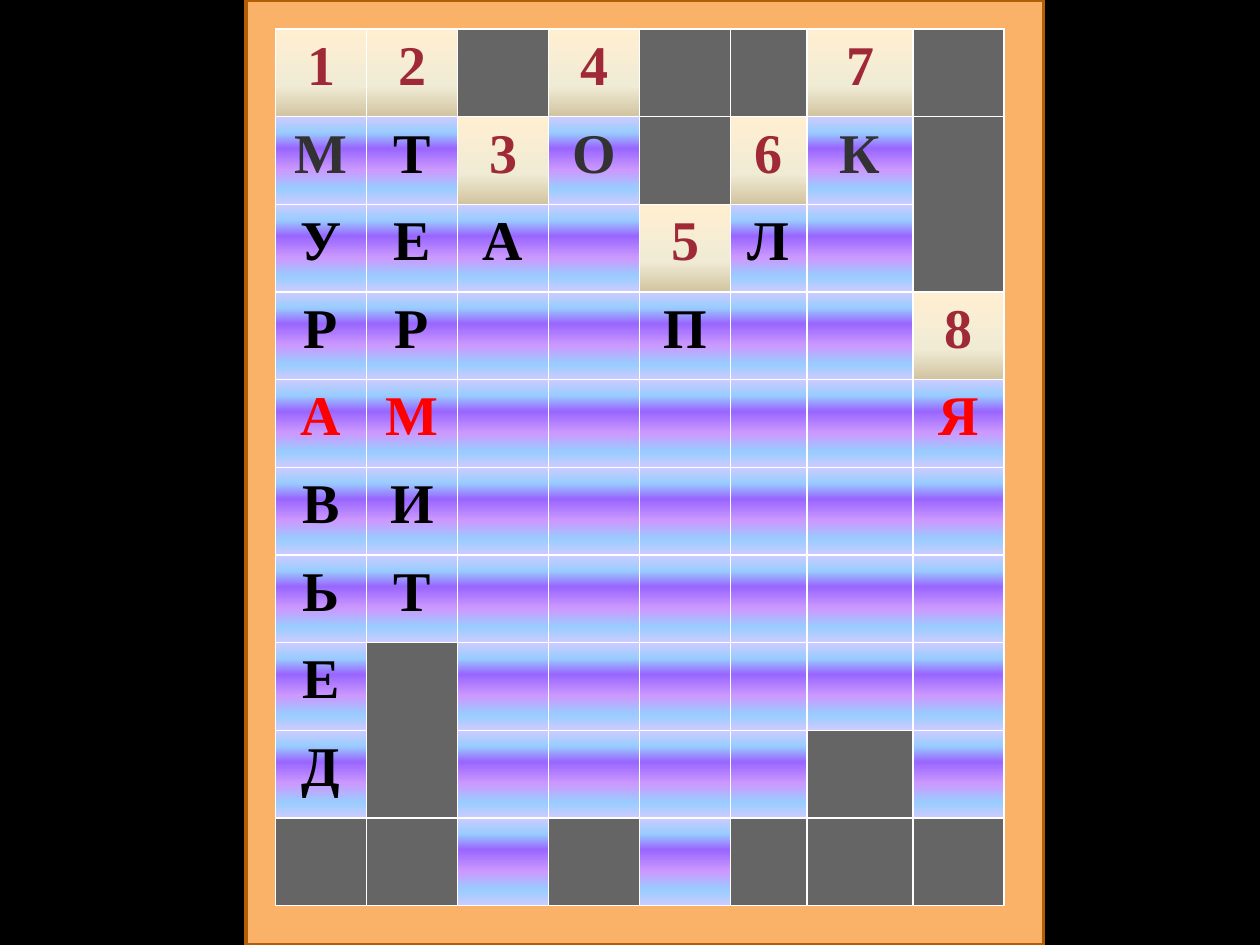
"""Build a crossword slide: a framed grid of numbers, letters and blocked squares."""
from lxml import etree
from pptx import Presentation
from pptx.dml.color import RGBColor
from pptx.enum.shapes import MSO_SHAPE
from pptx.enum.text import PP_ALIGN
from pptx.oxml.ns import qn
from pptx.util import Pt

PROCESS = MSO_SHAPE.FLOWCHART_PROCESS
CENTER = PP_ALIGN.CENTER

THEME = {
    "background": "000000",
    "frame": "F9B268",
    "frame_line": "B25E07",
    "blocked": "656565",
    "number": "9F2936",
    "letter": "000000",
    "soft_letter": "323232",
    "key_letter": "FF0000",
    "number_stops": [(0, "FFEFD1"), (65, "F0EBD5"), (100, "D1C39F")],
    "letter_stops": [(0, "CCCCFF"), (18, "99CCFF"), (36, "9966FF"),
                     (61, "CC99FF"), (82, "99CCFF"), (100, "CCCCFF")],
    "font": "Times New Roman",
    "size": Pt(32),
}

BLOCKED, EMPTY = "#", "."
GRID = [
    "12#4##7#",
    "МТ3О#6К#",
    "УЕА.5Л.#",
    "РР..П..8",
    "АМ.....Я",
    "ВИ......",
    "ЬТ......",
    "Е#......",
    "Д#....#.",
    "##.#.###",
]
KEY_ROW = 4
SOFT_SQUARES = {(1, 0), (1, 3), (1, 6)}
MERGES = [((1, 7), (2, 7)), ((7, 1), (8, 1))]
COLUMN_WIDTHS = [52, 52, 52, 52, 52, 43.8, 60.5, 52]
ROW_HEIGHT = 50.1


def rgb(name):
    return RGBColor.from_string(THEME[name])


def fill_gradient(cell, stops):
    cell.fill.gradient()
    cell.fill.gradient_angle = 270
    stop_list = cell._tc.tcPr.find(".//" + qn("a:gsLst"))
    for old_stop in list(stop_list):
        stop_list.remove(old_stop)
    for position, color in stops:
        stop = etree.SubElement(stop_list, qn("a:gs"), pos=str(position * 1000))
        etree.SubElement(stop, qn("a:srgbClr"), val=color)


presentation = Presentation()
presentation.slide_width, presentation.slide_height = Pt(720), Pt(540)
slide = presentation.slides.add_slide(presentation.slide_layouts[6])
slide.background.fill.solid()
slide.background.fill.fore_color.rgb = rgb("background")

frame = slide.shapes.add_shape(PROCESS, Pt(140.6), Pt(0), Pt(455.7), Pt(540))
frame.shadow.inherit = False
frame.fill.solid()
frame.fill.fore_color.rgb = rgb("frame")
frame.line.color.rgb = rgb("frame_line")
frame.line.width = Pt(2)

table = slide.shapes.add_table(
    len(GRID), len(COLUMN_WIDTHS), Pt(157.5), Pt(16.6),
    Pt(sum(COLUMN_WIDTHS)), Pt(ROW_HEIGHT * len(GRID))).table
for column, width in zip(table.columns, COLUMN_WIDTHS):
    column.width = Pt(width)
for row in table.rows:
    row.height = Pt(ROW_HEIGHT)

for row_index, line in enumerate(GRID):
    for column_index, mark in enumerate(line):
        cell = table.cell(row_index, column_index)
        if mark == BLOCKED:
            cell.fill.solid()
            cell.fill.fore_color.rgb = rgb("blocked")
            continue
        fill_gradient(cell, THEME["number_stops" if mark.isdigit() else "letter_stops"])
        if mark == EMPTY:
            continue
        if mark.isdigit():
            color_name = "number"
        elif row_index == KEY_ROW:
            color_name = "key_letter"
        elif (row_index, column_index) in SOFT_SQUARES:
            color_name = "soft_letter"
        else:
            color_name = "letter"
        paragraph = cell.text_frame.paragraphs[0]
        paragraph.alignment = CENTER
        run = paragraph.add_run()
        run.text = mark
        run.font.color.rgb = rgb(color_name)
        text_format = {"name": THEME["font"], "size": THEME["size"], "bold": True}
        for attribute, value in text_format.items():
            setattr(run.font, attribute, value)

for first, last in MERGES:
    table.cell(*first).merge(table.cell(*last))

presentation.save("out.pptx")
